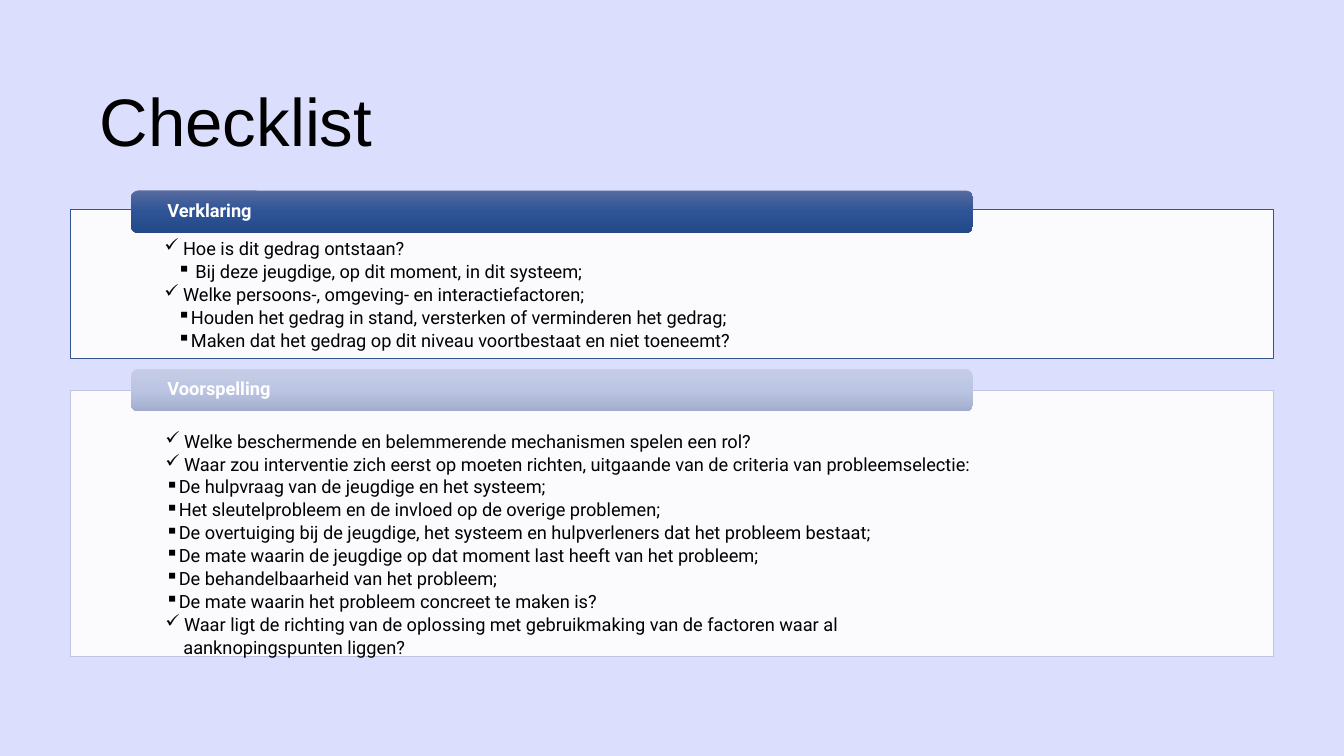
from copy import deepcopy
from lxml.etree import SubElement
from pptx import Presentation
from pptx.dml.color import RGBColor
from pptx.enum.shapes import MSO_SHAPE
from pptx.enum.text import MSO_ANCHOR, PP_ALIGN
from pptx.oxml.ns import qn
from pptx.util import Inches, Pt

BODY = {"name": "Roboto", "size": Pt(13)}
CHECK, SQUARE = "✓", "▪"
PANEL_LEFT, PANEL_WIDTH = 0.7, 11.93
HEADER_SHIFT, HEADER_SHARE, HEADER_HEIGHT = 0.6, 0.7, 0.42

# Each line is (bullet, text); indents give (left margin, first-line indent).
SECTIONS = [
    {
        "title": "Verklaring", "top": 2.08, "height": 1.48, "rise": 0.19,
        "line": "325491", "gradient": ["566B9E", "2E5396", "244989"],
        "insets": (0.93, 0.3, 0.93, 0.1),
        "indents": {CHECK: (0.12, -0.12), SQUARE: (0.25, -0.12)},
        "lines": [
            (CHECK, " Hoe is dit gedrag ontstaan?"),
            (SQUARE, " Bij deze jeugdige, op dit moment, in dit systeem;"),
            (CHECK, " Welke persoons-, omgeving- en interactiefactoren;"),
            (SQUARE, "Houden het gedrag in stand, versterken of verminderen het gedrag;"),
            (SQUARE, "Maken dat het gedrag op dit niveau voortbestaat en niet toeneemt?"),
        ],
    },
    {
        "title": "Voorspelling", "top": 3.87, "height": 2.64, "rise": 0.21,
        "line": "BCC6E2", "gradient": ["C6CEE6", "BBC5E3", "A3ADCD"],
        "insets": (0.55, 0.42, 0.55, 0.05),
        "indents": {CHECK: (0.48, -0.09), SQUARE: (0.48, -0.09), None: (0.57, 0)},
        "lines": [
            (CHECK, " Welke beschermende en belemmerende mechanismen spelen een rol?"),
            (CHECK, " Waar zou interventie zich eerst op moeten richten, "
                    "uitgaande van de criteria van probleemselectie:"),
            (SQUARE, "De hulpvraag van de jeugdige en het systeem;"),
            (SQUARE, "Het sleutelprobleem en de invloed op de overige problemen;"),
            (SQUARE, "De overtuiging bij de jeugdige, het systeem en hulpverleners "
                     "dat het probleem bestaat;"),
            (SQUARE, "De mate waarin de jeugdige op dat moment last heeft van het probleem;"),
            (SQUARE, "De behandelbaarheid van het probleem;"),
            (SQUARE, "De mate waarin het probleem concreet te maken is?"),
            (CHECK, " Waar ligt de richting van de oplossing met gebruikmaking "
                    "van de factoren waar al"),
            (None, "aanknopingspunten liggen?"),
        ],
    },
]


def color(hex_value):
    return RGBColor.from_string(hex_value)


def set_frame(shape, anchor, insets):
    """Set wrapping, anchor and insets (left, top, right, bottom)."""
    frame = shape.text_frame
    frame.word_wrap, frame.vertical_anchor = True, anchor
    for side, inset in zip(("left", "top", "right", "bottom"), insets):
        setattr(frame, f"margin_{side}", Inches(inset))
    return frame


def write(para, text, font, hex_value):
    para.alignment, para.line_spacing = PP_ALIGN.LEFT, 0.9
    span = para.add_run()
    span.text = text
    for name, value in font.items():
        setattr(span.font, name, value)
    span.font.color.rgb = color(hex_value)


def set_bullet(para, bullet, left, indent):
    properties = para._p.get_or_add_pPr()
    properties.set("marL", str(Inches(left)))
    properties.set("indent", str(Inches(indent)))
    if bullet:
        SubElement(properties, qn("a:buChar"), char=bullet)
    else:
        SubElement(properties, qn("a:buNone"))


def add_title(page, left, top, width, height):
    box = page.shapes.add_textbox(*map(Inches, (left, top, width, height)))
    frame = set_frame(box, MSO_ANCHOR.MIDDLE, (0.1, 0.05, 0.1, 0.05))
    write(frame.paragraphs[0], "Checklist", {"name": "Arial", "size": Pt(48)}, "000000")


def add_panel(page, section, left, top, width, height):
    panel = page.shapes.add_shape(
        MSO_SHAPE.RECTANGLE, *map(Inches, (left, top, width, height)))
    panel.shadow.inherit = False
    panel.fill.solid()
    panel.fill.fore_color.rgb = color("FFFFFF")
    white = panel._element.spPr.find(".//" + qn("a:srgbClr"))
    SubElement(white, qn("a:alpha"), val="90000")
    panel.line.color.rgb = color(section["line"])
    panel.line.width = Pt(0.5)
    frame = set_frame(panel, MSO_ANCHOR.TOP, section["insets"])
    for number, (bullet, text) in enumerate(section["lines"]):
        para = frame.add_paragraph() if number else frame.paragraphs[0]
        set_bullet(para, bullet, *section["indents"][bullet])
        write(para, text, BODY, "000000")
        para.space_after = Pt(2.3)


def add_header(page, section, left, top, width, height):
    header = page.shapes.add_shape(
        MSO_SHAPE.ROUNDED_RECTANGLE, *map(Inches, (left, top, width, height)))
    header.shadow.inherit = False
    header.line.fill.background()
    header.fill.gradient()
    header.fill.gradient_angle = 270
    stops = header._element.spPr.find(".//" + qn("a:gsLst"))
    stops.append(deepcopy(stops[0]))
    for number, stop in enumerate(header.fill.gradient_stops):
        stop.position = number / 2
        stop.color.rgb = color(section["gradient"][number])
    frame = set_frame(header, MSO_ANCHOR.MIDDLE, (0.34, 0, 0.34, 0))
    write(frame.paragraphs[0], section["title"], {**BODY, "bold": True}, "FFFFFF")


def add_section(page, section, left, top, width, height):
    """Place a panel with its header overlapping the top edge."""
    add_panel(page, section, left, top, width, height)
    add_header(page, section, left + HEADER_SHIFT, top - section["rise"],
               width * HEADER_SHARE, HEADER_HEIGHT)


def main():
    deck = Presentation()
    deck.slide_width, deck.slide_height = Inches(13.33), Inches(7.5)
    page = deck.slides.add_slide(deck.slide_layouts[6])
    page.background.fill.solid()
    page.background.fill.fore_color.rgb = color("DBDFFD")
    add_title(page, 0.89, 0.65, 11.13, 1.18)
    for section in SECTIONS:
        add_section(page, section, PANEL_LEFT, section["top"], PANEL_WIDTH, section["height"])
    deck.save("out.pptx")


if __name__ == "__main__":
    main()
